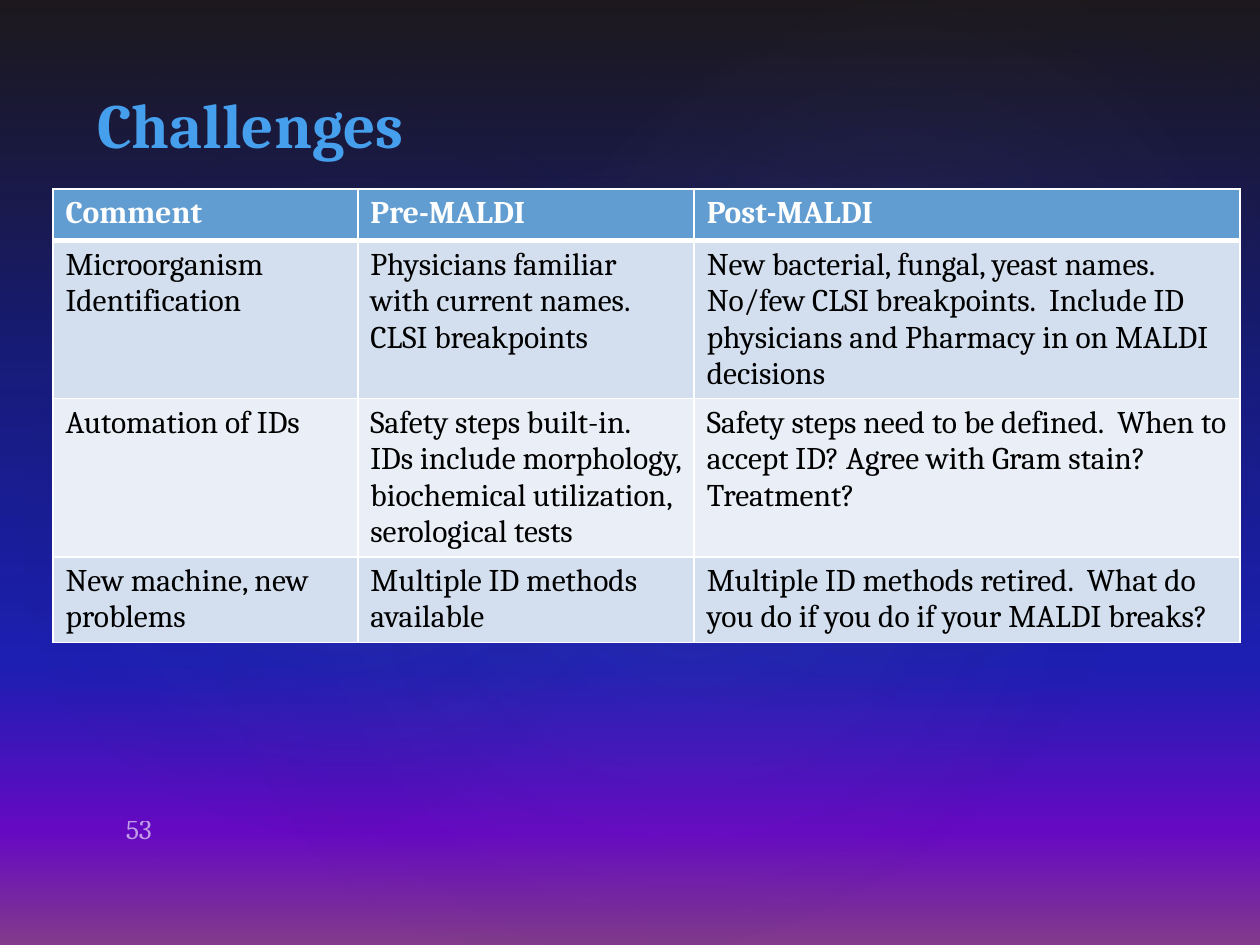
from lxml.etree import SubElement
from pptx import Presentation
from pptx.dml.color import RGBColor
from pptx.enum.shapes import MSO_SHAPE
from pptx.enum.text import MSO_ANCHOR, MSO_AUTO_SIZE, PP_ALIGN
from pptx.oxml.ns import qn
from pptx.util import Inches, Pt

COLORS = {
    "title": "469FED", "white": "FFFFFF", "text": "000000",
    "header": "629DD1", "band": "D3DFEE", "plain": "EAEFF7",
    "black": "000000", "navy": "0A128C", "blue": "181CC7",
    "violet": "7005D4", "mauve": "8C3D91",
    "brown": "504652", "dusk": "242852", "mist": "C4BCC6",
}

# Gradient stops: position %, colour, opacity %
SKY = [(0, "black", 100), (40, "navy", 100), (70, "blue", 100),
       (88, "violet", 100), (100, "mauve", 100)]
VEIL = [(0, "brown", 36), (100, "dusk", 10)]

# Soft glows: left, top, width, height, rotation, opacity % at the centre
GLOWS = [
    (1.5, 1.14, 7.92, 6.24, 328.7, 7),
    (-0.3, 1.28, 6.06, 4.9, 294.3, 8),
    (3.58, 0.13, 7.09, 5.2, 328.7, 8),
]

COLUMN_WIDTHS = [2.42, 2.67, 4.33]
ROW_HEIGHTS = [0.41, 1.25, 1.25, 0.68]
CHALLENGES = [
    ("Comment", "Pre-MALDI", "Post-MALDI"),
    ("Microorganism Identification",
     "Physicians familiar with current names. CLSI breakpoints",
     "New bacterial, fungal, yeast names.  No/few CLSI breakpoints.  "
     "Include ID physicians and Pharmacy in on MALDI decisions"),
    ("Automation of IDs",
     "Safety steps built-in.  IDs include morphology, biochemical "
     "utilization, serological tests",
     "Safety steps need to be defined.  When to accept ID? "
     "Agree with Gram stain?  Treatment?"),
    ("New machine, new problems",
     "Multiple ID methods available",
     "Multiple ID methods retired.  What do you do if you do if your "
     "MALDI breaks?"),
]


def add_color(parent, color, opacity=100):
    node = SubElement(parent, qn("a:srgbClr"), val=COLORS[color])
    if opacity < 100:
        SubElement(node, qn("a:alpha"), val=str(opacity * 1000))


def set_gradient(owner, fill, stops, radial=False):
    """Fill with any number of stops, from top to bottom or from the centre."""
    fill.gradient()
    gradient = next(owner.iter(qn("a:gradFill")))
    for child in list(gradient):
        gradient.remove(child)
    stop_list = SubElement(gradient, qn("a:gsLst"))
    for position, color, opacity in stops:
        stop = SubElement(stop_list, qn("a:gs"), pos=str(position * 1000))
        add_color(stop, color, opacity)
    if radial:
        center = SubElement(gradient, qn("a:path"), {"path": "circle"})
        SubElement(center, qn("a:fillToRect"),
                   {side: "50000" for side in "ltrb"})
    else:
        SubElement(gradient, qn("a:lin"), ang="5400000", scaled="0")


def set_borders(cell, widths):
    properties = cell._tc.get_or_add_tcPr()
    for side, width in widths.items():
        line = SubElement(properties, qn(f"a:ln{side}"), w=str(Pt(width)))
        add_color(SubElement(line, qn("a:solidFill")), "white")


class SlideBuilder:
    """Holds the text style and the current slide."""

    font = "Cambria"

    def __init__(self, slide):
        self.slide = slide

    def add_text(self, frame, text, size, color, bold=False):
        para = frame.paragraphs[0]
        para.alignment = PP_ALIGN.LEFT
        span = para.add_run()
        span.text = text
        values = {"name": self.font, "size": Pt(size), "bold": bold}
        for name, value in values.items():
            setattr(span.font, name, value)
        span.font.color.rgb = RGBColor.from_string(COLORS[color])
        return span

    def background(self, stops):
        set_gradient(self.slide._element, self.slide.background.fill, stops)

    def overlay(self, kind, place, stops, rotation=0, radial=False):
        shape = self.slide.shapes.add_shape(kind, *map(Inches, place))
        shape.rotation = rotation
        shape.shadow.inherit = False
        shape.line.fill.background()
        set_gradient(shape._element.spPr, shape.fill, stops, radial)

    def title(self, text, place):
        box = self.slide.shapes.title
        self.slide.shapes._spTree.append(box._element)  # in front of overlays
        box.left, box.top, box.width, box.height = map(Inches, place)
        frame = box.text_frame
        frame.auto_size = MSO_AUTO_SIZE.NONE
        frame.vertical_anchor = MSO_ANCHOR.BOTTOM
        self.add_text(frame, text, 36, "title", bold=True)

    def page_number(self, text, place):
        frame = self.slide.shapes.add_textbox(*map(Inches, place)).text_frame
        values = {"word_wrap": True, "vertical_anchor": MSO_ANCHOR.BOTTOM,
                  "margin_bottom": Inches(0.01)}
        for name, value in values.items():
            setattr(frame, name, value)
        span = self.add_text(frame, text, 16, "white")
        color = next(span._r.iter(qn("a:srgbClr")))
        SubElement(color, qn("a:alpha"), val="60000")

    def table(self, left, top, rows, widths, heights):
        table = self.slide.shapes.add_table(
            len(rows), len(widths), Inches(left), Inches(top),
            Inches(sum(widths)), Inches(sum(heights))).table
        for column, width in zip(table.columns, widths):
            column.width = Inches(width)
        for index, (row, texts) in enumerate(zip(table.rows, rows)):
            row.height = Inches(heights[index])
            header = index == 0
            fill = "header" if header else "band" if index % 2 else "plain"
            borders = {"L": 1, "R": 1, "T": 3 if index == 1 else 1,
                       "B": 3 if header else 1}
            for cell, text in zip(row.cells, texts):
                set_borders(cell, borders)
                cell.fill.solid()
                cell.fill.fore_color.rgb = RGBColor.from_string(COLORS[fill])
                self.add_text(cell.text_frame, text, 18,
                              "white" if header else "text", bold=header)


def main():
    deck = Presentation()
    deck.slide_width, deck.slide_height = Inches(10), Inches(7.5)
    page = SlideBuilder(deck.slides.add_slide(deck.slide_layouts[5]))

    page.background(SKY)
    page.overlay(MSO_SHAPE.RECTANGLE, (0, 0, 10, 7.5), VEIL)
    for *place, rotation, opacity in GLOWS:
        stops = [(0, "mist", opacity), (58, "dusk", 0)]
        page.overlay(MSO_SHAPE.OVAL, place, stops, rotation, radial=True)

    page.table(0.42, 1.5, CHALLENGES, COLUMN_WIDTHS, ROW_HEIGHTS)
    page.title("Challenges", (0.67, 0.33, 8.25, 1))
    page.page_number("53", (0.9, 6.39, 2.33, 0.33))
    deck.save("out.pptx")


if __name__ == "__main__":
    main()
